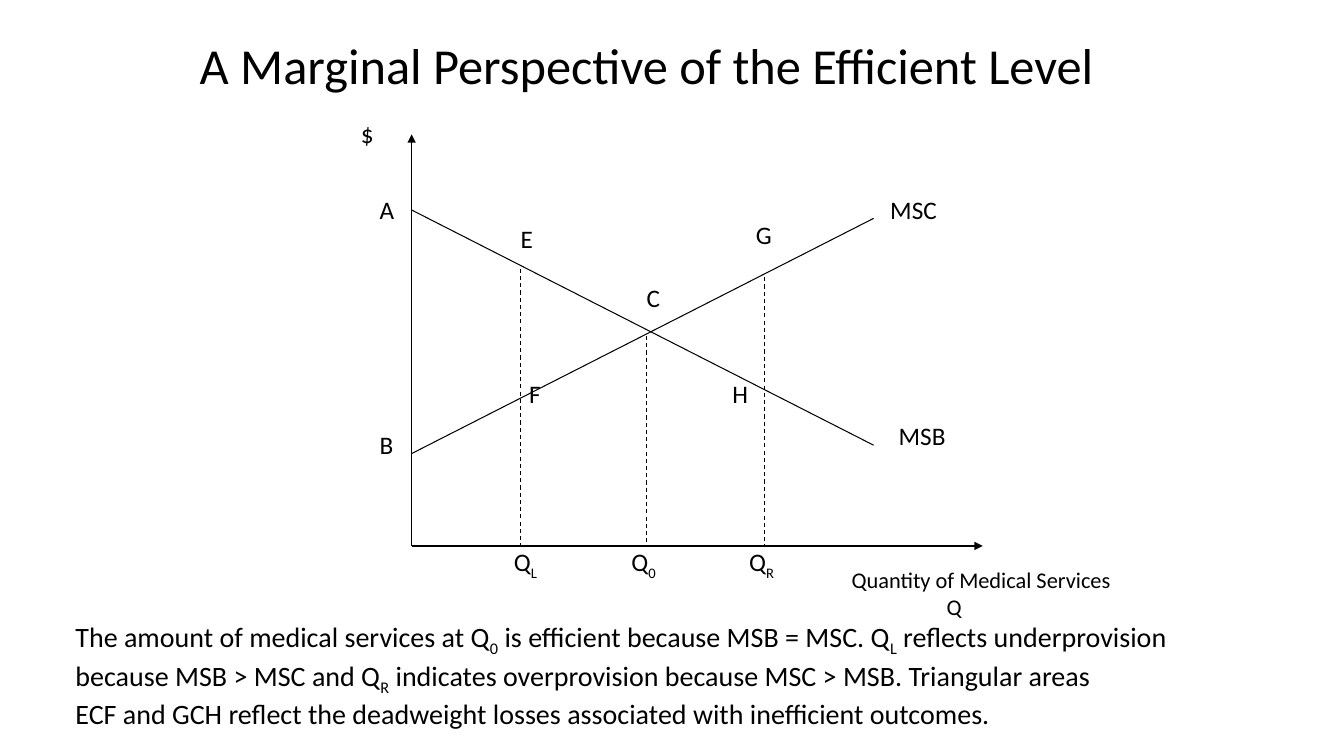
from pptx import Presentation
from pptx.dml.color import RGBColor
from pptx.enum import dml, shapes, text
from pptx.oxml import parse_xml
from pptx.oxml.ns import nsdecls, qn
from pptx.util import Inches, Pt
from dataclasses import dataclass


@dataclass(frozen=True)
class Theme:
    font: str = "Calibri"
    ink: RGBColor = RGBColor(0, 0, 0)
    title: int = 36
    body: int = 20
    label: int = 18
    caption: int = 16
    line: float = 0.75


THEME = Theme()
COLS, ROWS = 160, 90
WIDTH, HEIGHT = Inches(13.33), Inches(7.5)
ORIGIN_X, ORIGIN_Y = 49, 65
CURVE_END = 104
LABEL_ROWS = 4.8


def x(col):
    return round(WIDTH * col / COLS)


def y(row):
    return round(HEIGHT * row / ROWS)


def add_line(s, start, end, dashed=False, arrow=False):
    c = s.shapes.add_connector(
        shapes.MSO_CONNECTOR.STRAIGHT, x(start[0]), y(start[1]), x(end[0]), y(end[1]))
    c.line.color.rgb = THEME.ink
    c.line.width = Pt(THEME.line)
    if dashed:
        c.line.dash_style = dml.MSO_LINE.DASH
    if arrow:
        c.line._get_or_add_ln().append(
            parse_xml(f'<a:tailEnd {nsdecls("a")} type="triangle"/>'))
    c._element.spPr.append(parse_xml(f'<a:effectLst {nsdecls("a")}/>'))


def add_runs(p, line, size):
    for i, part in enumerate(line.split("_")):
        if not part:
            continue
        r = p.add_run()
        r.text = part
        formats = {"name": THEME.font, "size": Pt(size)}
        for name, value in formats.items():
            setattr(r.font, name, value)
        r.font.color.rgb = THEME.ink
        if i % 2:
            r._r.get_or_add_rPr().set("baseline", "-25000")


def add_text(s, box, lines, size, indents=()):
    col, row, cols, rows = box
    sp = s.shapes.add_textbox(x(col), y(row), x(cols), y(rows))
    tf = sp.text_frame
    formats = {"word_wrap": True, "auto_size": text.MSO_AUTO_SIZE.SHAPE_TO_FIT_TEXT}
    for name, value in formats.items():
        setattr(tf, name, value)
    for i, line in enumerate(lines):
        p = tf.paragraphs[0] if i == 0 else tf.add_paragraph()
        add_runs(p, line, size)
        if indents:
            p._p.get_or_add_pPr().set("marL", str(x(indents[i])))


def add_label(s, label, col, row, cols):
    add_text(s, (col, row, cols, LABEL_ROWS), [label], THEME.label)


def add_quantity(s, label, col, top):
    add_line(s, (col, top), (col, ORIGIN_Y), dashed=True)
    add_label(s, label, round(col - 2.5), ORIGIN_Y - 0.5, 6)


def main():
    prs = Presentation()
    prs.slide_width, prs.slide_height = WIDTH, HEIGHT
    s = prs.slides.add_slide(prs.slide_layouts[6])

    add_text(s, (22.6, 3.5, 110, 8.5),
             ["A Marginal Perspective of the Efficient Level"], THEME.title)

    origin = (ORIGIN_X, ORIGIN_Y)
    for end in ((ORIGIN_X, 16), (117, ORIGIN_Y)):
        add_line(s, origin, end, arrow=True)
    for start_row, end_row in ((25, 53), (54, 26)):
        add_line(s, (ORIGIN_X, start_row), (CURVE_END, end_row))
    for label, col, top in (("Q_L", 62, 32), ("Q_0", 77, 40), ("Q_R", 91, 33)):
        add_quantity(s, label, col, top)

    for label in (
        ("$", 41.8, 13.5, 4),
        ("A", 44, 22.5, 7),
        ("B", 44, 50.5, 7),
        ("C", 75.8, 33, 5),
        ("E", 60.8, 26, 5),
        ("F", 61.8, 44.5, 4),
        ("G", 88.8, 25.5, 5),
        ("H", 86, 44.5, 7),
        ("MSC", 104.8, 22.5, 8),
        ("MSB", 105.8, 49.5, 8),
    ):
        add_label(s, *label)

    add_text(s, (94.8, 66.8, 40, 7.7), ["Quantity of Medical Services", "Q"],
             THEME.caption, indents=(5.4, 16.7))
    add_text(s, (7.8, 73.2, 134, 13.3), [
        "The amount of medical services at Q_0_ is efficient because MSB = MSC. "
        "Q_L_ reflects underprovision",
        "because MSB > MSC and Q_R_ indicates overprovision because MSC > MSB. "
        "Triangular areas",
        "ECF and GCH reflect the deadweight losses associated with inefficient outcomes.",
    ], THEME.body)

    prs.save("out.pptx")


if __name__ == "__main__":
    main()
